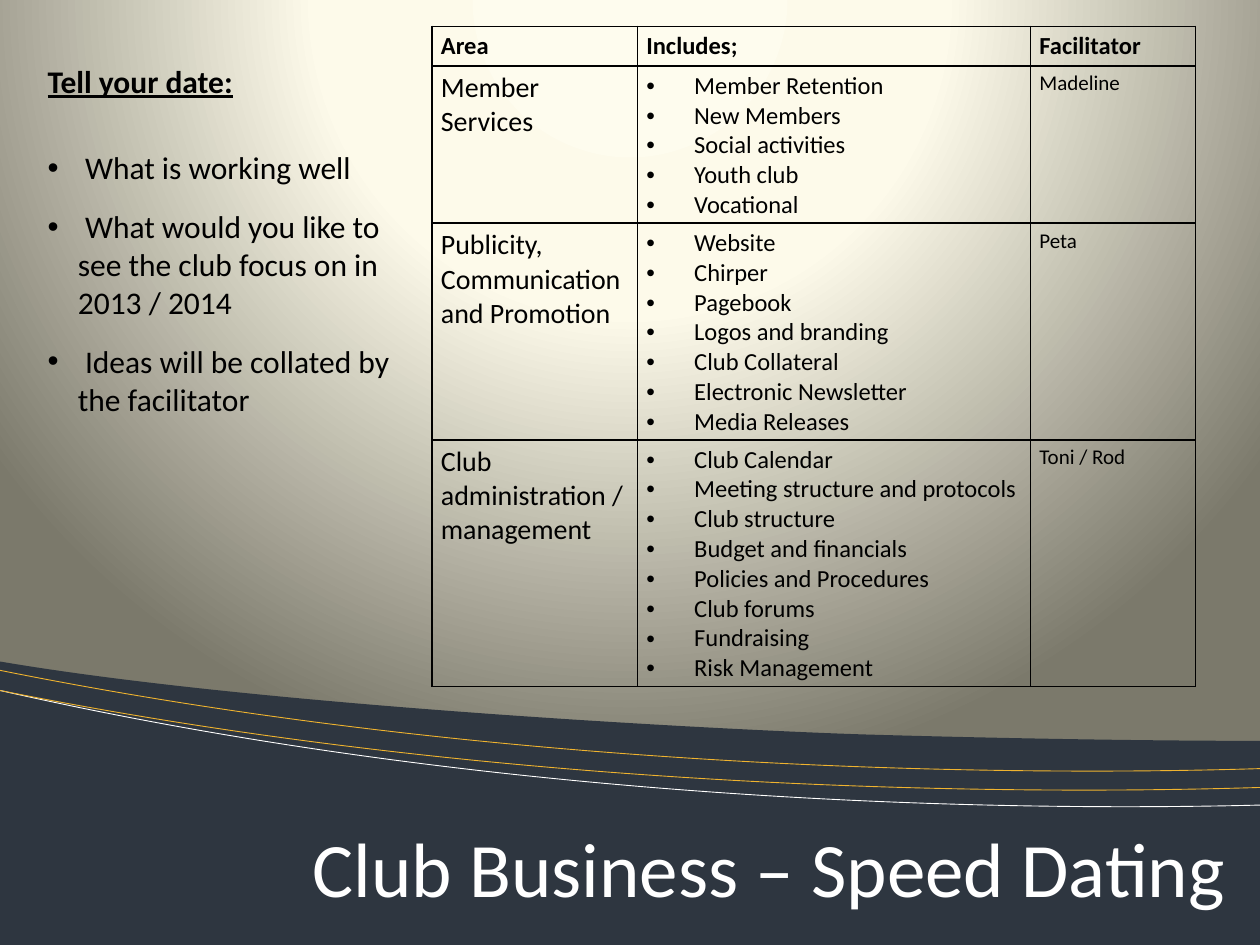
from lxml import etree
from pptx import Presentation
from pptx.dml.color import RGBColor
from pptx.enum.text import MSO_ANCHOR, PP_ALIGN
from pptx.oxml import parse_xml
from pptx.oxml.ns import nsdecls, qn
from pptx.util import Inches, Pt

LEFT, RIGHT = PP_ALIGN.LEFT, PP_ALIGN.RIGHT
TOP, MIDDLE = MSO_ANCHOR.TOP, MSO_ANCHOR.MIDDLE
WIDE, HIGH = 10, 7.5
FONT = "Calibri"
INK, WHITE, NAVY, GOLD = "000000", "FFFFFF", "2E3640", "EFB32F"
STOPS = [(0, "FEFCEE"), (40, "FDFAEA"), (100, "7B796B")]

WAVE = [(0, 5.25), (2.11, 5.61), (5.89, 5.8), (6.89, 5.83),
        (8.3, 5.87), (9.37, 5.88), (10, 5.88), (10, 7.5), (0, 7.5)]
LINES = [
    ("FFFFFE", [(0, 5.48), (4.24, 6.44), (8.42, 6.43), (10, 6.39)]),
    (GOLD, [(0, 5.32), (4.24, 6.17), (8.4, 6.15), (10, 6.1)]),
    (GOLD, [(0, 5.48), (4.24, 6.33), (8.4, 6.3), (10, 6.25)]),
]

COLS = [1.63, 3.12, 1.31]
ROWS = [0.3, 1.24, 1.72, 1.96]
HEADS = ["Area", "Includes;", "Facilitator"]
AREAS = [
    ("Member Services",
     ["Member Retention", "New Members", "Social activities", "Youth club",
      "Vocational"],
     "Madeline"),
    ("Publicity, Communication and Promotion",
     ["Website", "Chirper", "Pagebook", "Logos and branding",
      "Club Collateral", "Electronic Newsletter", "Media Releases"],
     "Peta"),
    ("Club administration / management",
     ["Club Calendar", "Meeting structure and protocols", "Club structure",
      "Budget and financials", "Policies and Procedures", "Club forums",
      "Fundraising", "Risk Management"],
     "Toni / Rod"),
]
ASKS = [" What is working well",
        " What would you like to see the club focus on in 2013 / 2014",
        " Ideas will be collated by the facilitator"]


def color(code):
    return RGBColor.from_string(code)


def write(frame, text, size=14, bold=False, under=False, ink=INK, align=LEFT,
          hang=0, before=0, after=0):
    para = frame.paragraphs[0]
    if para.runs:
        para = frame.add_paragraph()
    if hang:
        props = para._p.get_or_add_pPr()
        props.set("marL", str(Inches(hang)))
        props.set("indent", str(-Inches(hang)))
        etree.SubElement(props, qn("a:buFont")).set("typeface", "Arial")
        etree.SubElement(props, qn("a:buChar")).set("char", "•")
    para.alignment = align
    para.space_before, para.space_after = Pt(before), Pt(after)
    run = para.add_run()
    run.text = text
    font = run.font
    font.name, font.size, font.bold = FONT, Pt(size), bold
    font.underline = under
    font.color.rgb = color(ink)


def text_box(slide, box, anchor=TOP):
    frame = slide.shapes.add_textbox(*map(Inches, box)).text_frame
    frame.word_wrap = True
    frame.vertical_anchor = anchor
    return frame


def curve(slide, points, bends, close=False):
    spots = [(Inches(x), Inches(y)) for x, y in points]
    pen = slide.shapes.build_freeform(*spots[0])
    pen.add_line_segments(spots[1:], close=close)
    shape = pen.convert_to_shape()
    shape.shadow.inherit = False
    steps = list(shape._element.iter(qn("a:lnTo")))
    for k in range(bends):
        trio = steps[3 * k:3 * k + 3]
        bend = etree.Element(qn("a:cubicBezTo"))
        trio[0].addprevious(bend)
        for step in trio:
            bend.append(step[0])
            step.getparent().remove(step)
    return shape


def backdrop(slide):
    slide.background.fill.gradient()
    old = next(slide._element.iter(qn("a:gradFill")))
    stops = "".join(f'<a:gs pos="{at * 1000}"><a:srgbClr val="{code}"/></a:gs>'
                    for at, code in STOPS)
    new = parse_xml(
        f'<a:gradFill {nsdecls("a")} rotWithShape="1"><a:gsLst>{stops}</a:gsLst>'
        '<a:path path="circle"><a:fillToRect l="50000" t="-80000" r="50000" '
        'b="180000"/></a:path></a:gradFill>')
    old.getparent().replace(old, new)


def waves(slide):
    base = curve(slide, WAVE, 2, close=True)
    base.fill.solid()
    base.fill.fore_color.rgb = color(NAVY)
    base.line.fill.background()
    for code, points in LINES:
        line = curve(slide, points, 1)
        line.fill.background()
        line.line.color.rgb = color(code)
        line.line.width = Pt(0.5)


def title(slide, box):
    frame = text_box(slide, box, MIDDLE)
    write(frame, "Club Business – Speed Dating", size=44, ink=WHITE, align=RIGHT)


def border(cell):
    props = cell._tc.get_or_add_tcPr()
    for k, side in enumerate("LRTB"):
        props.insert(k, parse_xml(
            f'<a:ln{side} {nsdecls("a")} w="{Pt(1)}"><a:solidFill>'
            f'<a:srgbClr val="{INK}"/></a:solidFill></a:ln{side}>'))


def grid(slide, left, top):
    box = map(Inches, (left, top, sum(COLS), sum(ROWS)))
    table = slide.shapes.add_table(len(ROWS), len(COLS), *box).table
    table.first_row = table.horz_banding = False
    for col, wide in zip(table.columns, COLS):
        col.width = Inches(wide)
    for row, high in zip(table.rows, ROWS):
        row.height = Inches(high)
    for cell in table.iter_cells():
        cell.margin_left = cell.margin_right = Inches(0.07)
        cell.margin_top = cell.margin_bottom = Inches(0.04)
        cell.fill.background()
        border(cell)
    for col, head in enumerate(HEADS):
        write(table.cell(0, col).text_frame, head, bold=True)
    for row, (area, items, who) in enumerate(AREAS, 1):
        write(table.cell(row, 0).text_frame, area, size=16)
        for item in items:
            write(table.cell(row, 1).text_frame, item, hang=0.38)
        write(table.cell(row, 2).text_frame, who, size=12)


def prompts(slide, box):
    frame = text_box(slide, box)
    write(frame, "Tell your date:", size=18, bold=True, under=True)
    for k, ask in enumerate(ASKS):
        write(frame, ask, size=18, hang=0.24, before=6 if k else 28, after=6)


def main():
    deck = Presentation()
    deck.slide_width, deck.slide_height = Inches(WIDE), Inches(HIGH)
    slide = deck.slides.add_slide(deck.slide_layouts[6])
    backdrop(slide)
    waves(slide)
    title(slide, (0.83, 6.25, 9, 1.25))
    grid(slide, 3.43, 0.21)
    prompts(slide, (0.28, 0.44, 2.91, 2.95))
    deck.save("out.pptx")


if __name__ == "__main__":
    main()
